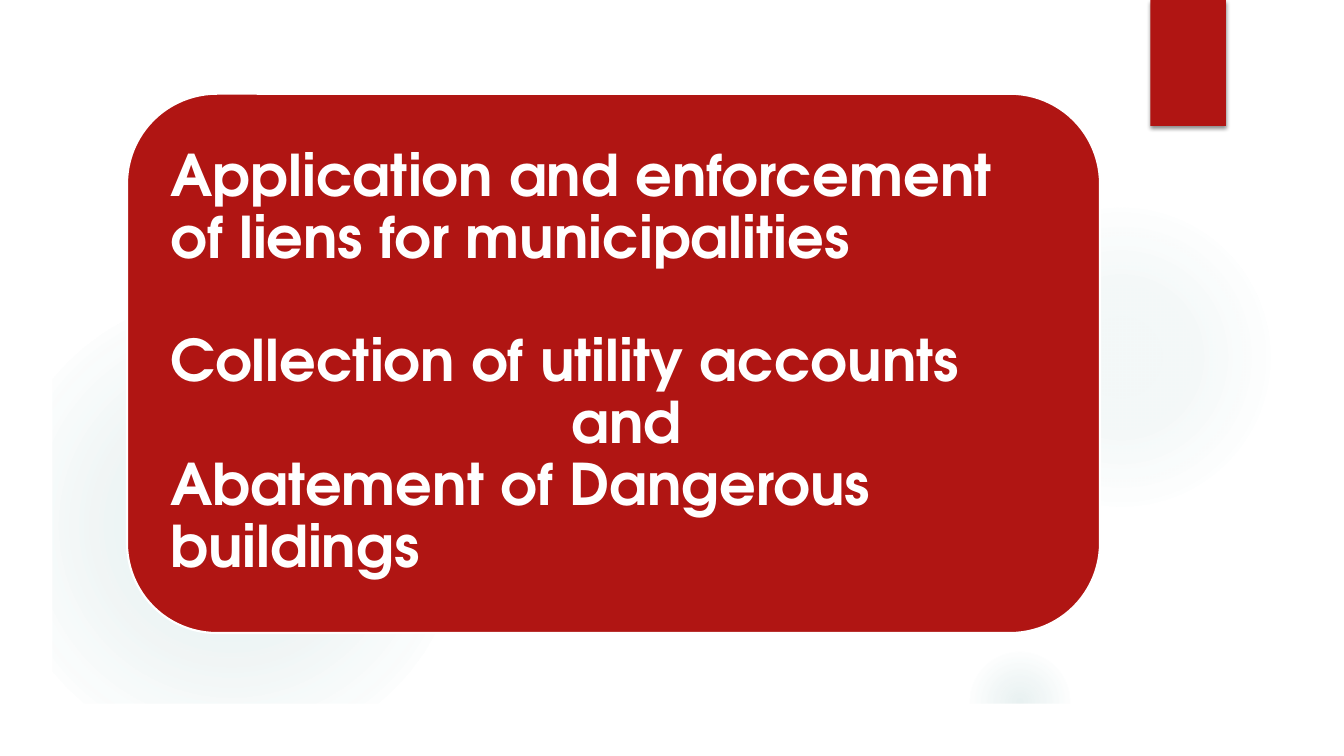
from lxml import etree
from pptx import Presentation
from pptx import util as u
from pptx.dml.color import RGBColor
from pptx.enum import shapes, text
from pptx.oxml import parse_xml
from pptx.oxml.ns import nsdecls, qn

COLORS = {"red": "B01513", "white": "FFFFFF", "teal": "5F9C9D", "black": "000000"}
FONT = "TeX Gyre Adventor"
SLIDE_WIDTH, SLIDE_HEIGHT = 13.33, 7.5

# Title lines: text, space before (points), left indent (inches)
TITLE = [
    ("Application and enforcement of liens for municipalities", 0, 0),
    ("Collection of utility accounts", 44, 0),
    ("and", 0, 3.98),
    ("Abatement of Dangerous buildings", 0, 0),
]

# Background glows: left, top, diameter, (position %, opacity %) stops
GLOWS = [
    (9.58, 2, 3.08, [(0, 7), (36, 6), (69, 0)]),
    (9.58, 6.42, 1.08, [(0, 14), (36, 7), (66, 0)]),
    (0, 2.92, 4.58, [(0, 11), (36, 10), (75, 0)]),
]
FRAME_WIDTH = 0.52
TAB = (11.41, 0, 0.75, 1.25)
PANEL = (1.26, 0.93, 9.65, 5.35)
PANEL_PADDING = 0.26
TEXT_INSET = 0.17


def add_block(slide, kind, box, color):
    shape = slide.shapes.add_shape(kind, *map(u.Inches, box))
    shape.shadow.inherit = False
    shape.fill.solid()
    shape.fill.fore_color.rgb = RGBColor.from_string(COLORS[color])
    shape.line.fill.background()
    return shape


def set_glow(shape, stops):
    stop_xml = "".join(
        f'<a:gs pos="{position * 1000}"><a:srgbClr val="{COLORS["teal"]}">'
        f'<a:alpha val="{opacity * 1000}"/></a:srgbClr></a:gs>'
        for position, opacity in stops
    )
    gradient = parse_xml(
        f'<a:gradFill {nsdecls("a")} rotWithShape="1"><a:gsLst>{stop_xml}</a:gsLst>'
        '<a:path path="circle"><a:fillToRect l="50000" t="50000" r="50000" b="50000"/>'
        "</a:path></a:gradFill>"
    )
    properties = shape.element.spPr
    properties.replace(properties.find(qn("a:solidFill")), gradient)


def add_shadow(shape):
    effects = shape.element.spPr.find(qn("a:effectLst"))
    shadow = etree.SubElement(
        effects, qn("a:outerShdw"), blurRad=str(u.Pt(3)), dist=str(u.Pt(2)),
        dir=str(90 * 60000), rotWithShape="0")
    color = etree.SubElement(shadow, qn("a:srgbClr"), val=COLORS["black"])
    etree.SubElement(color, qn("a:alpha"), val="45000")


def add_title(slide):
    left, top, width, height = PANEL
    box = (left + PANEL_PADDING, top + PANEL_PADDING,
           width - 2 * PANEL_PADDING, height - 2 * PANEL_PADDING)
    frame = slide.shapes.add_textbox(*map(u.Inches, box)).text_frame
    frame.word_wrap = True
    frame.vertical_anchor = text.MSO_ANCHOR.MIDDLE
    frame.margin_left = frame.margin_right = u.Inches(TEXT_INSET)
    frame.margin_top = frame.margin_bottom = u.Inches(TEXT_INSET)
    for index, (line, space_before, indent) in enumerate(TITLE):
        paragraph = frame.add_paragraph() if index else frame.paragraphs[0]
        paragraph.text = line
        paragraph.line_spacing = 0.9
        if space_before:
            paragraph.space_before = u.Pt(space_before)
        if indent:
            paragraph._p.get_or_add_pPr().set("marL", str(u.Inches(indent)))
        paragraph.font.name = FONT
        paragraph.font.size = u.Pt(41)
        paragraph.font.bold = True
        paragraph.font.color.rgb = RGBColor.from_string(COLORS["white"])


def main():
    presentation = Presentation()
    presentation.slide_width = u.Inches(SLIDE_WIDTH)
    presentation.slide_height = u.Inches(SLIDE_HEIGHT)
    slide = presentation.slides.add_slide(presentation.slide_layouts[6])
    kinds = shapes.MSO_SHAPE

    # Background glows, trimmed by a white frame
    for left, top, diameter, stops in GLOWS:
        glow = add_block(slide, kinds.OVAL, (left, top, diameter, diameter), "teal")
        set_glow(glow, stops)
    border = add_block(slide, kinds.FRAME, (0, 0, SLIDE_WIDTH, SLIDE_HEIGHT), "white")
    border.adjustments[0] = FRAME_WIDTH / SLIDE_HEIGHT

    # Red tab at the top edge
    add_shadow(add_block(slide, kinds.RECTANGLE, TAB, "red"))

    # Title panel
    panel = add_block(slide, kinds.ROUNDED_RECTANGLE, PANEL, "red")
    panel.line.color.rgb = RGBColor.from_string(COLORS["white"])
    panel.line.width = u.Pt(1.5)
    add_title(slide)

    presentation.save("out.pptx")


if __name__ == "__main__":
    main()
